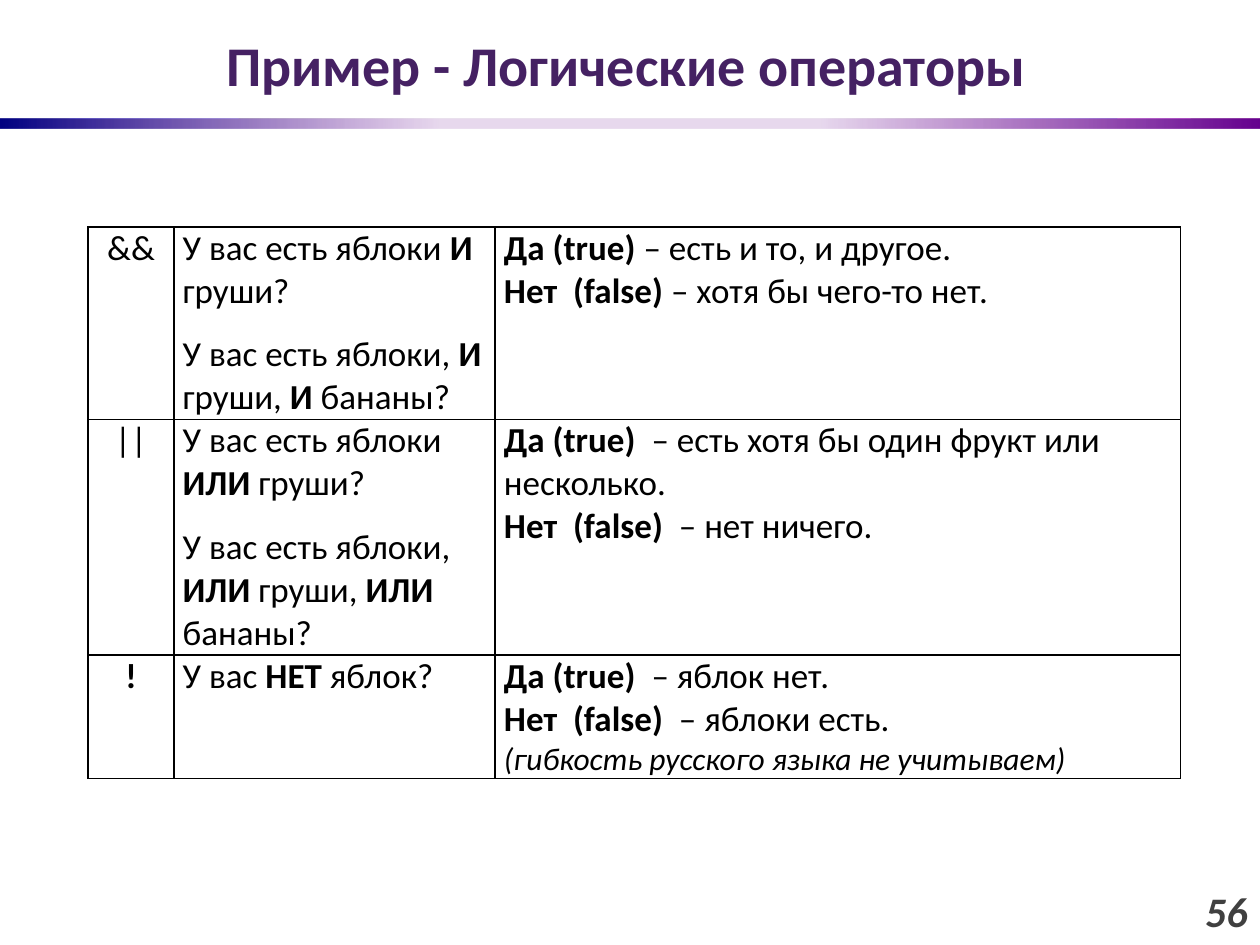
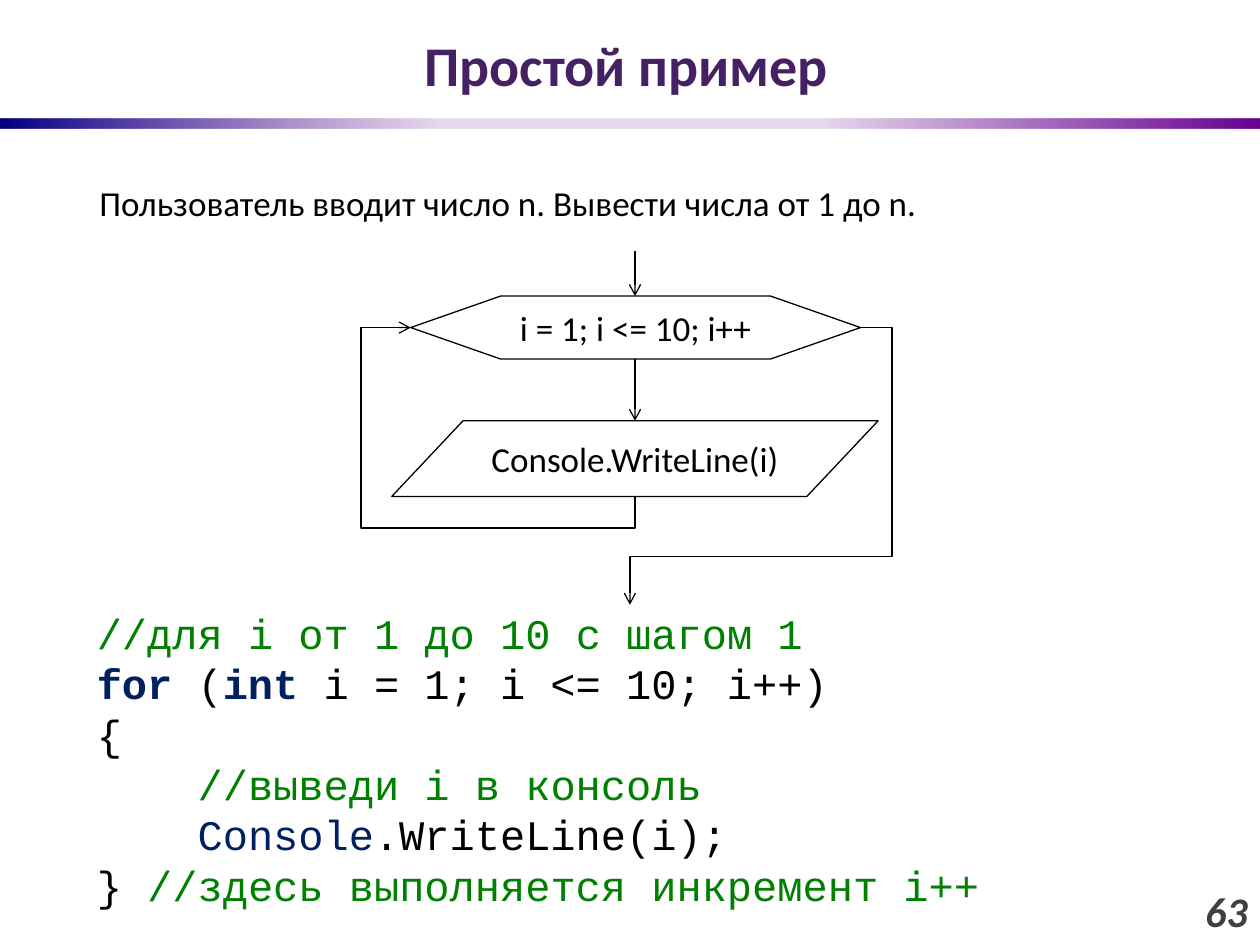
from dataclasses import dataclass

from lxml import etree
from pptx import Presentation
from pptx.dml.color import RGBColor
from pptx.enum.shapes import MSO_CONNECTOR, MSO_SHAPE
from pptx.enum.text import MSO_ANCHOR, PP_ALIGN
from pptx.oxml import parse_xml
from pptx.oxml.ns import nsdecls, qn
from pptx.util import Inches, Pt

LEFT, CENTER, RIGHT = PP_ALIGN.LEFT, PP_ALIGN.CENTER, PP_ALIGN.RIGHT
TOP, MIDDLE = MSO_ANCHOR.TOP, MSO_ANCHOR.MIDDLE
RECTANGLE = MSO_SHAPE.RECTANGLE
PARALLELOGRAM = MSO_SHAPE.PARALLELOGRAM
PREPARATION = MSO_SHAPE.FLOWCHART_PREPARATION
STRAIGHT, ELBOW = MSO_CONNECTOR.STRAIGHT, MSO_CONNECTOR.ELBOW


@dataclass(frozen=True)
class Theme:
    font: str = "Calibri"
    code_font: str = "Courier New"
    title: str = "452163"
    page: str = "404040"
    ink: str = "000000"
    paper: str = "FFFFFF"
    comment: str = "008000"
    keyword: str = "002060"
    band: tuple = ((0, "000082", 100), (35, "66008F", 15), (65, "66008F", 15), (100, "66008F", 100))
    title_size: int = 32
    large: int = 24
    body: int = 20
    small: int = 18
    hairline: float = 0.75
    border: float = 1


THEME = Theme()
BOLD = {"bold": True}
ASIDE = {"italic": True, "size": THEME.small}
COMMENT = {"color": THEME.comment}
TYPE_NAME = {"color": THEME.keyword}
KEYWORD = {"color": THEME.keyword, "bold": True}

OPERATORS_TITLE, OPERATORS_PAGE = "Пример - Логические операторы", "56"
OPERATORS = [
    (
        ["&&"],
        [
            ["У вас есть яблоки ", ("И", BOLD), " груши?"],
            ["У вас есть яблоки, ", ("И", BOLD), " груши, ", ("И", BOLD), " бананы?"],
        ],
        [
            [("Да (true) ", BOLD), "– есть и то, и другое."],
            [("Нет  (false) ", BOLD), "– хотя бы чего-то нет."],
        ],
    ),
    (
        ["||"],
        [
            ["У вас есть яблоки ", ("ИЛИ", BOLD), " груши?"],
            ["У вас есть яблоки, ", ("ИЛИ", BOLD), " груши, ", ("ИЛИ ", BOLD), "бананы?"],
        ],
        [
            [("Да (true) ", BOLD), " – есть хотя бы один фрукт или несколько."],
            [("Нет  (false) ", BOLD), " – нет ничего."],
        ],
    ),
    (
        [[("!", BOLD)]],
        [["У вас ", ("НЕТ", BOLD), " яблок?"]],
        [
            [("Да (true) ", BOLD), " – яблок нет."],
            [("Нет  (false) ", BOLD), " – яблоки есть."],
            [("(гибкость русского языка не учитываем)", ASIDE)],
        ],
    ),
]
OPERATOR_WIDTHS = (0.68, 2.55, 5.44)
OPERATOR_HEIGHTS = (1.53, 1.87, 0.98)
OPERATOR_FORMATS = ({"align": CENTER, "gap": 6}, {"gap": 6}, {})

LOOP_TITLE, LOOP_PAGE = "Простой пример", "63"
TASK = "Пользователь вводит число n. Вывести числа от 1 до n."
CODE = [
    [("//для i от 1 до 10 с шагом 1", COMMENT)],
    [("for", KEYWORD), " (", ("int ", KEYWORD), "i = 1; i <= 10; i++)"],
    "{",
    [("//выведи i в консоль", COMMENT)],
    [("Console", TYPE_NAME), ".WriteLine(i);"],
    ["} ", ("//здесь выполняется инкремент i++", COMMENT)],
]
CODE_INDENTS = {3: 0.8, 4: 0.8}
FLOW_STEPS = [
    (PARALLELOGRAM, "Console.WriteLine(i)", (3.11, 3.34, 3.86, 0.6), 0.04, 0.942),
    (PREPARATION, "i = 1; i <= 10; i++", (3.26, 2.35, 3.57, 0.5), 0.08, None),
]
FLOW_AXIS = 5.04
DOWN_ARROWS = [(1.99, 2.35), (2.85, 3.34)]
BENT_ARROWS = [
    ((3.48, 2.38, 1.34, 1.78), (-0.186, 1.222), {"rot": "5400000", "flipH": "1"}),
    ((5, 2.6, 1.83, 2.2), (-0.137, 0.825), {"flipH": "1"}),
]


def inches(*lengths):
    return [Inches(length) for length in lengths]


def rgb(value):
    return RGBColor.from_string(value)


def write(frame, paragraphs, *, size=THEME.body, font=THEME.font, color=THEME.ink, bold=False,
          italic=False, align=LEFT, anchor=TOP, gap=0, insets=(0.1, 0.05), indents=None):
    frame.word_wrap = True
    frame.vertical_anchor = anchor
    frame.margin_left = frame.margin_right = Inches(insets[0])
    frame.margin_top = frame.margin_bottom = Inches(insets[1])
    for index, parts in enumerate(paragraphs):
        paragraph = frame.add_paragraph() if index else frame.paragraphs[0]
        paragraph.alignment = align
        paragraph.space_before = paragraph.space_after = Pt(gap)
        if indents and index in indents:
            paragraph._p.get_or_add_pPr().set("marL", str(Inches(indents[index])))
        for part in [parts] if isinstance(parts, str) else parts:
            words, changes = (part, {}) if isinstance(part, str) else part
            style = {"size": size, "color": color, "bold": bold, "italic": italic, **changes}
            run = paragraph.add_run()
            run.text = words
            run.font.name = font
            run.font.size = Pt(style["size"])
            run.font.color.rgb = rgb(style["color"])
            run.font.bold = style["bold"]
            run.font.italic = style["italic"]


def add_text(slide, place, paragraphs, **style):
    write(slide.shapes.add_textbox(*inches(*place)).text_frame, paragraphs, **style)


def add_band(slide):
    band = slide.shapes.add_shape(RECTANGLE, *inches(0, 0.94, 10, 0.08))
    band.shadow.inherit = False
    band.line.fill.background()
    stops = "".join(
        f'<a:gs pos="{at * 1000}"><a:srgbClr val="{color}"><a:alpha val="{alpha * 1000}"/></a:srgbClr></a:gs>'
        for at, color, alpha in THEME.band
    )
    gradient = parse_xml(
        f'<a:gradFill {nsdecls("a")} rotWithShape="1"><a:gsLst>{stops}</a:gsLst><a:lin ang="0" scaled="1"/></a:gradFill>'
    )
    band._element.spPr.find(qn("a:prstGeom")).addnext(gradient)


def new_slide(deck, title, page):
    slide = deck.slides.add_slide(deck.slide_layouts[6])
    add_band(slide)
    add_text(slide, (0.47, 0, 9, 1.02), [title], size=THEME.title_size, color=THEME.title,
             bold=True, align=CENTER, anchor=MIDDLE)
    add_text(slide, (9.06, 6.95, 0.94, 0.55), [page], size=THEME.large, color=THEME.page,
             bold=True, italic=True, align=RIGHT, anchor=MIDDLE)
    return slide


def add_borders(cell):
    properties = cell._tc.get_or_add_tcPr()
    for index, side in enumerate(("lnL", "lnR", "lnT", "lnB")):
        properties.insert(index, parse_xml(
            f'<a:{side} {nsdecls("a")} w="{Pt(THEME.border)}"><a:solidFill>'
            f'<a:srgbClr val="{THEME.ink}"/></a:solidFill></a:{side}>'
        ))


def add_operators(slide):
    place = inches(0.7, 1.8, sum(OPERATOR_WIDTHS), sum(OPERATOR_HEIGHTS))
    table = slide.shapes.add_table(len(OPERATORS), len(OPERATOR_WIDTHS), *place).table
    table.first_row = table.horz_banding = False
    for column, width in zip(table.columns, OPERATOR_WIDTHS):
        column.width = Inches(width)
    for row, height, contents in zip(table.rows, OPERATOR_HEIGHTS, OPERATORS):
        row.height = Inches(height)
        for cell, paragraphs, style in zip(row.cells, contents, OPERATOR_FORMATS):
            cell.fill.background()
            add_borders(cell)
            write(cell.text_frame, paragraphs, insets=(0.07, 0), **style)
            cell.margin_left = cell.margin_right = Inches(0.07)
            cell.margin_top = cell.margin_bottom = 0


def add_step(slide, outline, label, place, inset, slant):
    step = slide.shapes.add_shape(outline, *inches(*place))
    step.shadow.inherit = False
    step.fill.solid()
    step.fill.fore_color.rgb = rgb(THEME.paper)
    step.line.color.rgb = rgb(THEME.ink)
    step.line.width = Pt(THEME.hairline)
    if slant:
        step.adjustments[0] = slant
    write(step.text_frame, [label], align=CENTER, anchor=MIDDLE, insets=(0, inset))


def add_arrow(slide, kind, start, end):
    arrow = slide.shapes.add_connector(kind, *inches(*start, *end))
    arrow.line.color.rgb = rgb(THEME.ink)
    arrow.line.width = Pt(THEME.hairline)
    etree.SubElement(arrow.line._get_or_add_ln(), qn("a:tailEnd"), type="arrow")
    etree.SubElement(arrow._element.spPr, qn("a:effectLst"))
    return arrow


def add_bent_arrow(slide, place, bends, turn):
    left, top, width, height = place
    properties = add_arrow(slide, ELBOW, (left, top), (left + width, top + height))._element.spPr
    for key, value in turn.items():
        properties.find(qn("a:xfrm")).set(key, value)
    geometry = properties.find(qn("a:prstGeom"))
    geometry.set("prst", "bentConnector4")
    guides = geometry.find(qn("a:avLst"))
    if guides is None:
        guides = etree.SubElement(geometry, qn("a:avLst"))
    for number, bend in enumerate(bends, 1):
        etree.SubElement(guides, qn("a:gd"), name=f"adj{number}", fmla=f"val {round(bend * 100000)}")


def main():
    deck = Presentation()
    deck.slide_width, deck.slide_height = inches(10, 7.5)

    add_operators(new_slide(deck, OPERATORS_TITLE, OPERATORS_PAGE))

    loop = new_slide(deck, LOOP_TITLE, LOOP_PAGE)
    add_text(loop, (0.67, 4.77, 8.66, 2.52), CODE, size=THEME.large, font=THEME.code_font,
             indents=CODE_INDENTS)
    for step in FLOW_STEPS:
        add_step(loop, *step)
    for start, end in DOWN_ARROWS:
        add_arrow(loop, STRAIGHT, (FLOW_AXIS, start), (FLOW_AXIS, end))
    for bent in BENT_ARROWS:
        add_bent_arrow(loop, *bent)
    add_text(loop, (0.69, 1.39, 8.7, 0.44), [TASK])

    deck.save("out.pptx")


if __name__ == "__main__":
    main()
